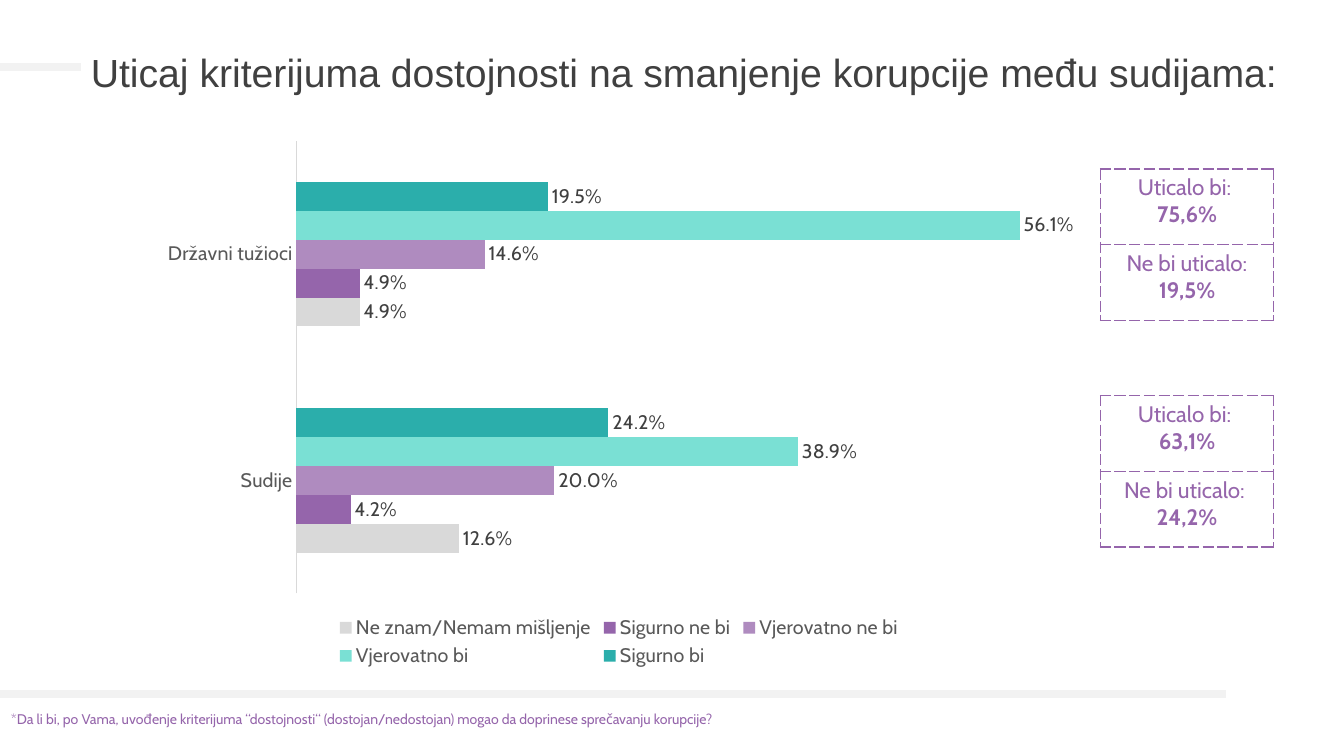
from lxml import etree
from pptx import Presentation
from pptx import util as u
from pptx.chart.data import CategoryChartData
from pptx.dml.color import RGBColor
from pptx.enum import chart as charts, shapes, text
from pptx.oxml import parse_xml
from pptx.oxml.ns import nsdecls, qn

PX = 9525
INK = RGBColor(0x40, 0x40, 0x40)
AXIS_TEXT = RGBColor(0x59, 0x59, 0x59)
RULE = RGBColor(0xF2, 0xF2, 0xF2)
GREY = RGBColor(0xD9, 0xD9, 0xD9)
PURPLE = RGBColor(0x95, 0x65, 0xAB)
LILAC = RGBColor(0xAF, 0x8B, 0xBF)
MINT = RGBColor(0x7A, 0xE0, 0xD4)
TEAL = RGBColor(0x2B, 0xAE, 0xAB)

GROUPS = ["Državni tužioci", "Sudije"]
ANSWERS = [
    ("Sigurno bi", (0.195, 0.242), TEAL),
    ("Vjerovatno bi", (0.561, 0.389), MINT),
    ("Vjerovatno ne bi", (0.146, 0.2), LILAC),
    ("Sigurno ne bi", (0.049, 0.042), PURPLE),
    ("Ne znam/Nemam mišljenje", (0.049, 0.126), GREY),
]
# One table per group: cells hold paragraphs, paragraphs hold spans.
SUMMARIES = [
    [[["Uticalo bi: "], ["75,6%"]], [["Ne bi uticalo: ", "19,5%"]]],
    [[["Uticalo bi: "], ["63,1%"]], [["Ne bi uticalo: "], ["24,2%"]]],
]


class SlideBuilder:
    heading_font = "Arial"
    body_font = "Cabin"

    def __init__(self, page):
        self.page = page

    def style(self, font, size, color, name=body_font):
        font.name, font.size = name, u.Pt(size)
        font.color.rgb = color

    def rule(self, right, y):
        """Draw a thick grey line from the left slide edge."""
        line = self.page.shapes.add_connector(
            shapes.MSO_CONNECTOR.STRAIGHT, 0, y * PX, right * PX, y * PX)
        line.line.color.rgb = RULE
        line.line.width = u.Pt(6)
        etree.SubElement(line._element.spPr, qn("a:effectLst"))

    def textbox(self, left, top, width, height, words, size, color, name):
        box = self.page.shapes.add_textbox(
            left * PX, top * PX, width * PX, height * PX)
        frame = box.text_frame
        frame.word_wrap = True
        para = frame.paragraphs[0]
        para.text = words
        self.style(para.font, size, color, name)
        return frame

    def title(self, left, top, width, height, words):
        frame = self.textbox(left, top, width, height, words, 28, INK,
                             self.heading_font)
        frame.vertical_anchor = text.MSO_ANCHOR.MIDDLE
        frame.paragraphs[0].line_spacing = 0.9

    def footnote(self, left, top, width, height, words):
        frame = self.textbox(left, top, width, height, words, 10, PURPLE,
                             self.body_font)
        frame.auto_size = text.MSO_AUTO_SIZE.SHAPE_TO_FIT_TEXT

    def dash_borders(self, cell):
        props = cell._tc.get_or_add_tcPr()
        for position, side in enumerate(("lnL", "lnR", "lnT", "lnB")):
            props.insert(position, parse_xml(
                f'<a:{side} {nsdecls("a")} w="12700"><a:solidFill>'
                f'<a:srgbClr val="{PURPLE}"/></a:solidFill>'
                f'<a:prstDash val="dash"/></a:{side}>'))

    def summary(self, left, top, width, row_height, cells):
        """Add a one-column dashed table with the shares in bold."""
        table = self.page.shapes.add_table(
            len(cells), 1, left * PX, top * PX, width * PX,
            len(cells) * row_height * PX).table
        table.first_row = table.horz_banding = False
        for row, paragraphs in enumerate(cells):
            cell = table.cell(row, 0)
            cell.fill.background()
            self.dash_borders(cell)
            frame = cell.text_frame
            for index, spans in enumerate(paragraphs):
                para = frame.add_paragraph() if index else frame.paragraphs[0]
                para.alignment = text.PP_ALIGN.CENTER
                self.style(para.font, 16, PURPLE)
                for words in spans:
                    span = para.add_run()
                    span.text = words
                    span.font.bold = words.endswith("%")

    def bar_chart(self, left, top, width, height, groups, answers):
        data = CategoryChartData(number_format="0.0%")
        data.categories = groups
        for name, values, _ in answers:
            data.add_series(name, values)
        chart = self.page.shapes.add_chart(
            charts.XL_CHART_TYPE.BAR_CLUSTERED, left * PX, top * PX,
            width * PX, height * PX, data).chart
        self.style(chart.font, 14, AXIS_TEXT)
        chart.has_title = False
        chart.has_legend = True
        chart.legend.position = charts.XL_LEGEND_POSITION.BOTTOM
        chart.legend.include_in_layout = False
        self.style(chart.legend.font, 14, AXIS_TEXT)

        category_axis = chart.category_axis
        category_axis.reverse_order = True
        category_axis.major_tick_mark = charts.XL_TICK_MARK.NONE
        category_axis.format.line.color.rgb = GREY
        category_axis.format.line.width = u.Pt(0.75)
        self.style(category_axis.tick_labels.font, 14, AXIS_TEXT)
        chart.value_axis.visible = False
        chart.value_axis.has_major_gridlines = False
        chart.value_axis.minimum_scale = 0
        chart.value_axis.maximum_scale = 0.6

        plot = chart.plots[0]
        plot.gap_width = 282
        plot.vary_by_categories = False
        for series, (_, _, color) in zip(plot.series, answers):
            series.format.fill.solid()
            series.format.fill.fore_color.rgb = color
            series.invert_if_negative = False
            labels = series.data_labels
            labels.show_value = True
            labels.position = charts.XL_LABEL_POSITION.OUTSIDE_END
            labels.number_format = "0.0%"
            labels.number_format_is_linked = False
            self.style(labels.font, 14, INK)


def main():
    deck = Presentation()
    deck.slide_width, deck.slide_height = 1280 * PX, 720 * PX
    slide = SlideBuilder(deck.slides.add_slide(deck.slide_layouts[6]))
    slide.rule(77, 64)
    slide.title(77, 29, 1167, 84, "Uticaj kriterijuma dostojnosti na "
                "smanjenje korupcije među sudijama:")
    slide.rule(1168, 661)
    slide.footnote(1, 672, 1093, 26, "*Da li bi, po Vama, uvođenje kriterijuma "
                   "“dostojnosti“ (dostojan/nedostojan) mogao da doprinese "
                   "sprečavanju korupcije?")
    for index, cells in enumerate(SUMMARIES):
        slide.summary(1048, 161 + index * 216, 165, 72, cells)
    slide.bar_chart(142, 124, 895, 516, GROUPS, ANSWERS)
    deck.save("out.pptx")


if __name__ == "__main__":
    main()
